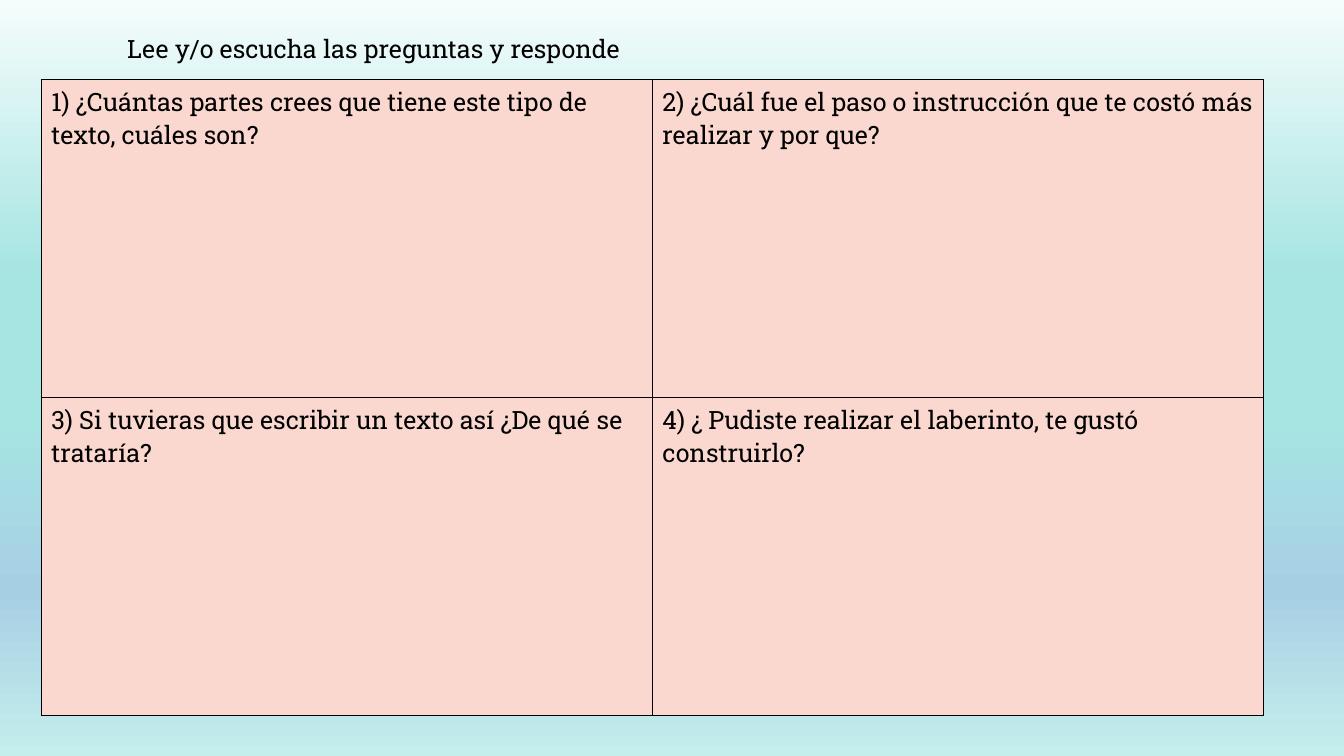
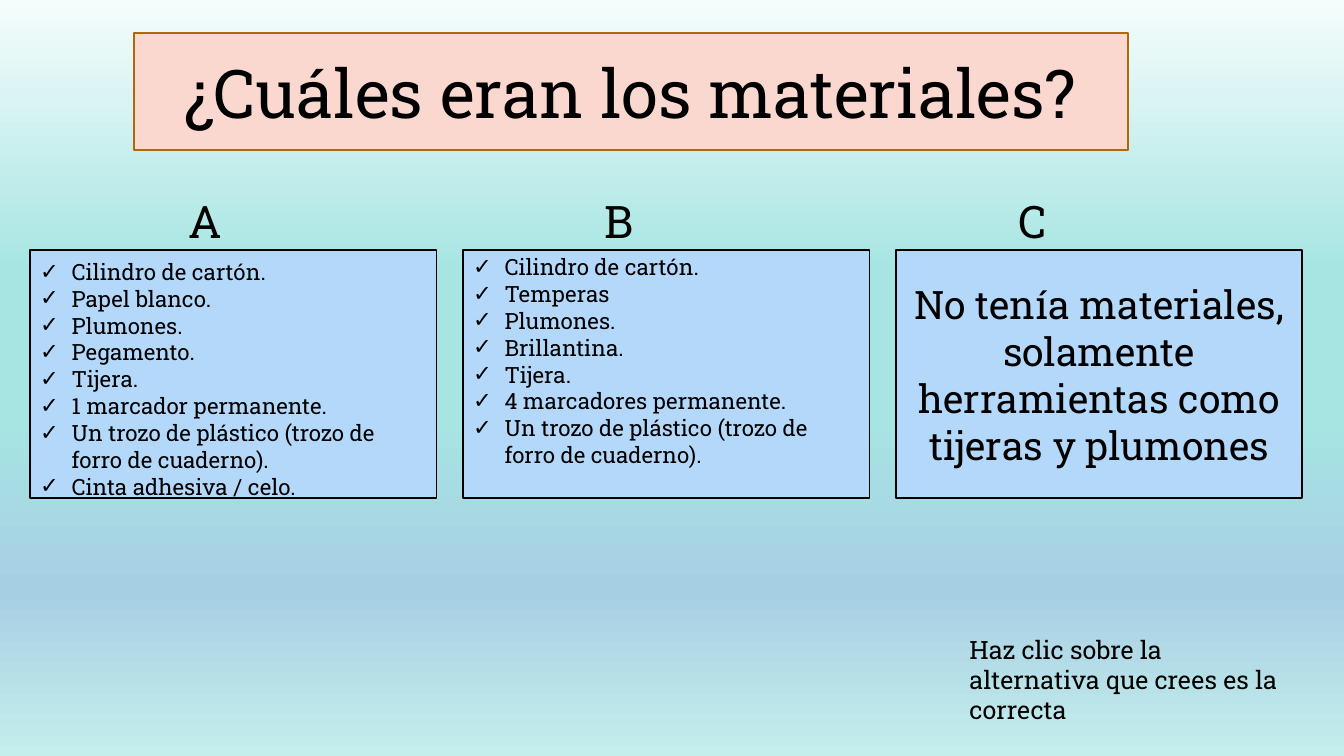
import pptx
import pptx.util
import pptx.dml.color
import pptx.enum.shapes
import pptx.enum.text
import pptx.oxml
import pptx.oxml.ns

Cm = pptx.util.Cm
Pt = pptx.util.Pt
ALIGN = pptx.enum.text.PP_ALIGN
ANCHOR = pptx.enum.text.MSO_ANCHOR
NS = pptx.oxml.ns.nsdecls("a", "p")

COLORS = {"text": "000000", "edge": "000000", "pink": "FAD8CF", "blue": "B4D8FA", "brown": "AC6A0B"}
GRADIENT = [(0, "F5FCFC"), (36, "A6E5E2"), (55, "A6E5E2"), (78, "A7CFE4"), (100, "C4EEEB")]


def rgb(name):
    return pptx.dml.color.RGBColor.from_string(COLORS[name])


def assign(target, values):
    for name, value in values.items():
        setattr(target, name, value)


class Deck:
    font = {"name": "Roboto Slab", "bold": False}
    frame = {"word_wrap": True, "auto_size": pptx.enum.text.MSO_AUTO_SIZE.NONE}
    leading = 1.2

    def __init__(self):
        self.prs = pptx.Presentation()
        self.prs.slide_width, self.prs.slide_height = Cm(33.87), Cm(19.05)
        self.s = None
        self.background()

    def background(self):
        stops = "".join(
            f'<a:gs pos="{pos * 1000}"><a:srgbClr val="{color}"/></a:gs>' for pos, color in GRADIENT)
        bg = pptx.oxml.parse_xml(
            f'<p:bg {NS}><p:bgPr><a:gradFill><a:gsLst>{stops}</a:gsLst>'
            '<a:lin ang="5400000" scaled="0"/></a:gradFill><a:effectLst/></p:bgPr></p:bg>')
        c_sld = self.prs.slide_master.element.find(pptx.oxml.ns.qn("p:cSld"))
        for old in c_sld.findall(pptx.oxml.ns.qn("p:bg")):
            c_sld.remove(old)
        c_sld.insert(0, bg)

    def slide(self, layout):
        self.s = self.prs.slides.add_slide(self.prs.slide_layouts[layout])

    def place(self, sp, box):
        assign(sp, dict(zip(("left", "top", "width", "height"), map(Cm, box))))

    def paint(self, sp, fill, line):
        sp.fill.solid()
        sp.fill.fore_color.rgb = rgb(fill)
        sp.line.color.rgb = rgb(line)
        sp.line.width = Pt(1.25)

    def style_runs(self, p, size):
        for r in p.runs:
            assign(r.font, {**self.font, "size": Pt(size)})
            r.font.color.rgb = rgb("text")

    def bullet(self, p):
        pPr = p._p.get_or_add_pPr()
        pPr.set("marL", str(Cm(0.79)))
        pPr.set("indent", str(-Cm(0.79)))
        pPr.append(pptx.oxml.parse_xml(f'<a:buChar {NS} char="✓"/>'))

    def put_text(self, sp, text, size, align=ALIGN.LEFT, anchor=ANCHOR.TOP, bullets=False):
        tf = sp.text_frame
        tf.text = text
        assign(tf, {**self.frame, "vertical_anchor": anchor})
        for p in tf.paragraphs:
            if bullets:
                self.bullet(p)
            assign(p, {"alignment": align, "space_before": Pt(0),
                       "line_spacing": Pt(size * self.leading)})
            self.style_runs(p, size)

    def title(self, text, box, size, align=ALIGN.LEFT, anchor=ANCHOR.TOP):
        sp = self.s.shapes.title
        self.place(sp, box)
        self.put_text(sp, text, size, align, anchor)
        return sp

    def banner(self, text, box, size):
        sp = self.title(text, box, size, ALIGN.CENTER, ANCHOR.MIDDLE)
        sp.element.spPr.append(pptx.oxml.parse_xml(
            f'<a:prstGeom {NS} prst="roundRect"><a:avLst/></a:prstGeom>'))
        self.paint(sp, "pink", "brown")

    def textbox(self, text, box, size, align=ALIGN.LEFT):
        sp = self.s.shapes.add_textbox(*map(Cm, box))
        self.put_text(sp, text, size, align)

    def card(self, text, box, size):
        sp = self.s.shapes.add_shape(pptx.enum.shapes.MSO_SHAPE.RECTANGLE, *map(Cm, box))
        sp.shadow.inherit = False
        self.paint(sp, "blue", "edge")
        self.put_text(sp, text, size, ALIGN.CENTER, ANCHOR.MIDDLE)

    def checklist(self, idx, items, box, size, margin_top):
        sp = self.s.placeholders[idx]
        self.place(sp, box)
        self.paint(sp, "blue", "edge")
        self.put_text(sp, "\n".join(items), size, bullets=True)
        sp.text_frame.margin_top = Cm(margin_top)

    def table(self, rows, box, size):
        tbl = self.s.shapes.add_table(len(rows), len(rows[0]), *map(Cm, box)).table
        assign(tbl, {"first_row": False, "horz_banding": False})
        for r, row in enumerate(rows):
            for c, text in enumerate(row):
                cell = tbl.cell(r, c)
                tcPr = cell._tc.get_or_add_tcPr()
                for side in "LRTB":
                    tcPr.append(pptx.oxml.parse_xml(
                        f'<a:ln{side} {NS} w="12700"><a:solidFill>'
                        f'<a:srgbClr val="{COLORS["edge"]}"/></a:solidFill></a:ln{side}>'))
                cell.fill.solid()
                cell.fill.fore_color.rgb = rgb("pink")
                cell.text = text
                self.style_runs(cell.text_frame.paragraphs[0], size)


def questions(deck):
    deck.slide(5)
    deck.table([
        ["1) ¿Cuántas partes crees que tiene este tipo de texto, cuáles son?",
         "2) ¿Cuál fue el paso o instrucción que te costó más realizar y por que?"],
        ["3) Si tuvieras que escribir un texto así ¿De qué se trataría?",
         "4) ¿ Pudiste realizar el laberinto, te gustó construirlo?"],
    ], (1.04, 2.01, 30.8, 16.02), 18)
    deck.title("Lee y/o escucha las preguntas y responde", (2.95, 0.72, 29.92, 1.02), 18)


def materials(deck):
    deck.slide(3)
    deck.banner("¿Cuáles eran los materiales?", (3.38, 0.84, 25.04, 2.95), 48)
    boxes = [(0.76 + 10.91 * i, 6.3, 10.24, 6.25) for i in range(3)]
    plastic = "Un trozo de plástico (trozo de forro de cuaderno)."
    deck.checklist(1, ["Cilindro de cartón.", "Papel blanco.", "Plumones.", "Pegamento.", "Tijera.",
                       "1 marcador permanente.", plastic, "Cinta adhesiva / celo."], boxes[0], 16, 0.2)
    deck.checklist(2, ["Cilindro de cartón.", "Temperas", "Plumones.", "Brillantina.", "Tijera.",
                       "4 marcadores permanente.", plastic], boxes[1], 16, 0.08)
    deck.card("No tenía materiales, solamente herramientas como tijeras y plumones", boxes[2], 28)
    for i, letter in enumerate("ABC"):
        deck.textbox(letter, (2.68 + 10.42 * i, 4.75, 5, 1.63), 32, ALIGN.CENTER)
    deck.textbox("Haz clic sobre la alternativa que crees es la correcta", (24.18, 15.85, 8.46, 2.54), 18)


def main():
    deck = Deck()
    questions(deck)
    materials(deck)
    deck.prs.save("out.pptx")


if __name__ == "__main__":
    main()
